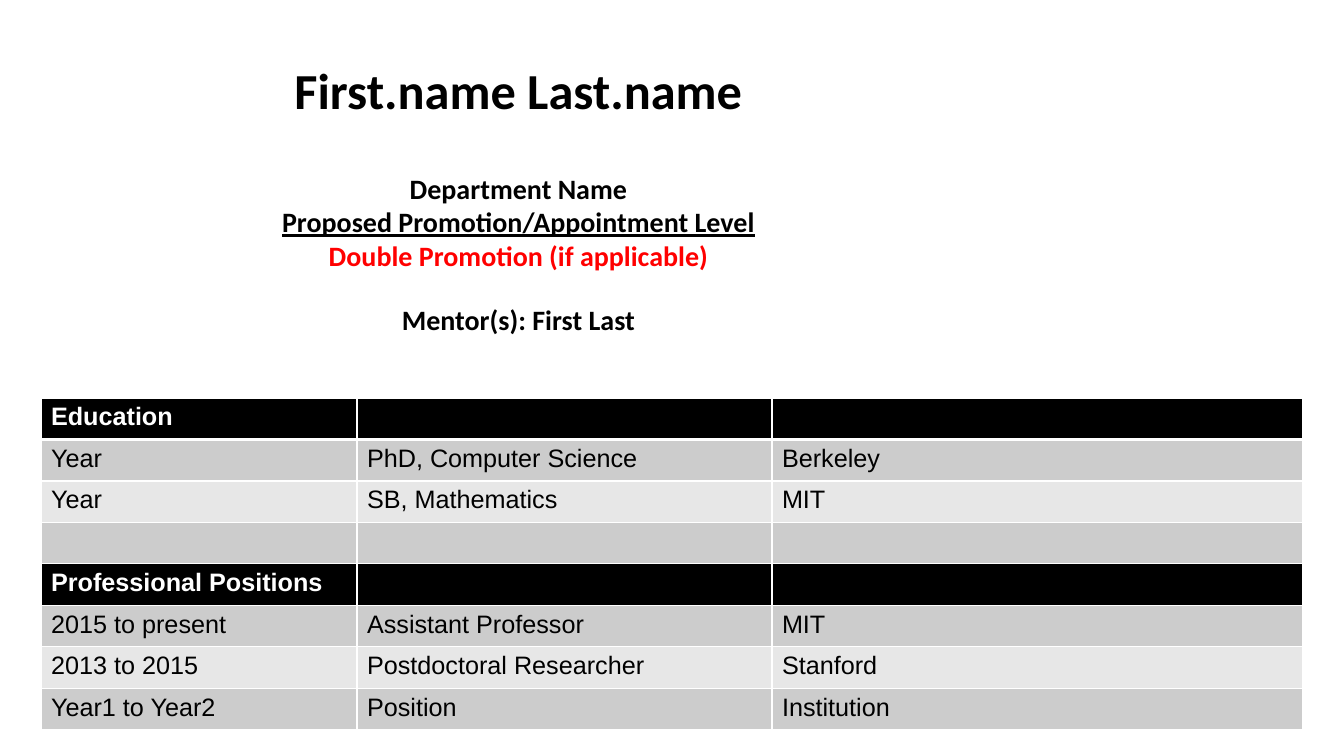
from lxml import etree
from pptx import Presentation
from pptx import util as u
from pptx.dml.color import RGBColor
from pptx.enum import text
from pptx.oxml import ns

EMU_PER_PX = 914400 / 100.8

BLACK = RGBColor(0x00, 0x00, 0x00)
WHITE = RGBColor(0xFF, 0xFF, 0xFF)
RED = RGBColor(0xFF, 0x00, 0x00)
DARK_BAND = RGBColor(0xCC, 0xCC, 0xCC)
LIGHT_BAND = RGBColor(0xE7, 0xE7, 0xE7)

# Text, size, colour, underline, space before in points
HEADING = [
    ("First.name Last.name", 36, BLACK, False, 0),
    ("Department Name", 20, BLACK, False, 37),
    ("Proposed Promotion/Appointment Level", 20, BLACK, True, 0),
    ("Double Promotion (if applicable)", 20, RED, False, 0),
    ("Mentor(s): First Last", 20, BLACK, False, 22),
]

COLUMN_WIDTHS = [316, 415, 531]
SECTION_ROWS = 4
HISTORY = [
    ("Education", "", ""),
    ("Year", "PhD, Computer Science", "Berkeley"),
    ("Year", "SB, Mathematics", "MIT"),
    ("", "", ""),
    ("Professional Positions", "", ""),
    ("2015 to present", "Assistant Professor", "MIT"),
    ("2013 to 2015", "Postdoctoral Researcher", "Stanford"),
    ("Year1 to Year2", "Position", "Institution"),
]


def px(length):
    return u.Emu(round(length * EMU_PER_PX))


def style_runs(paragraph, font_name, size, color, bold):
    for run in paragraph.runs:
        run.font.name = font_name
        run.font.size = u.Pt(size)
        run.font.color.rgb = color
        run.font.bold = bold


def add_heading(slide, left, top, width, height):
    frame = slide.shapes.add_textbox(px(left), px(top), px(width), px(height)).text_frame
    frame.word_wrap = True
    frame.margin_top = px(8)
    frame.text = "\n".join(line[0] for line in HEADING)
    for paragraph, (_, size, color, underline, gap) in zip(frame.paragraphs, HEADING):
        paragraph.alignment = text.PP_ALIGN.CENTER
        if gap:
            paragraph.space_before = u.Pt(gap)
        if size == 20:
            paragraph.line_spacing = u.Pt(24)
        style_runs(paragraph, "Calibri", size, color, True)
        paragraph.runs[0].font.underline = underline


def set_borders(cell, top_width, bottom_width):
    properties = cell._tc.get_or_add_tcPr()
    widths = {"a:lnL": 1, "a:lnR": 1, "a:lnT": top_width, "a:lnB": bottom_width}
    for position, (tag, width) in enumerate(widths.items()):
        line = etree.Element(ns.qn(tag), w=str(u.Pt(width)))
        fill = etree.SubElement(line, ns.qn("a:solidFill"))
        etree.SubElement(fill, ns.qn("a:srgbClr"), val=str(WHITE))
        properties.insert(position, line)


def fill_cell(cell, value, row):
    is_header = row % SECTION_ROWS == 0
    if is_header:
        band = BLACK
    else:
        band = DARK_BAND if row % 2 else LIGHT_BAND
    cell.fill.solid()
    cell.fill.fore_color.rgb = band
    set_borders(cell, 3 if row == 1 else 1, 3 if row == 0 else 1)
    cell.text_frame.text = value
    style_runs(cell.text_frame.paragraphs[0], "Arial", 18,
               WHITE if is_header else BLACK, is_header)


def add_history_table(slide, left, top, height):
    frame = slide.shapes.add_table(len(HISTORY), len(COLUMN_WIDTHS), px(left), px(top),
                                   px(sum(COLUMN_WIDTHS)), px(height))
    table = frame.table
    for column, width in zip(table.columns, COLUMN_WIDTHS):
        column.width = px(width)
    for row, values in enumerate(HISTORY):
        for column, value in enumerate(values):
            fill_cell(table.cell(row, column), value, row)


def main():
    presentation = Presentation()
    presentation.slide_width = px(1344)
    presentation.slide_height = px(756)
    slide = presentation.slides.add_slide(presentation.slide_layouts[6])

    # Candidate name, department and promotion
    add_heading(slide, 168, 51, 701, 333)

    # Education and positions
    add_history_table(slide, 41, 398, 332)

    presentation.save("out.pptx")


if __name__ == "__main__":
    main()
